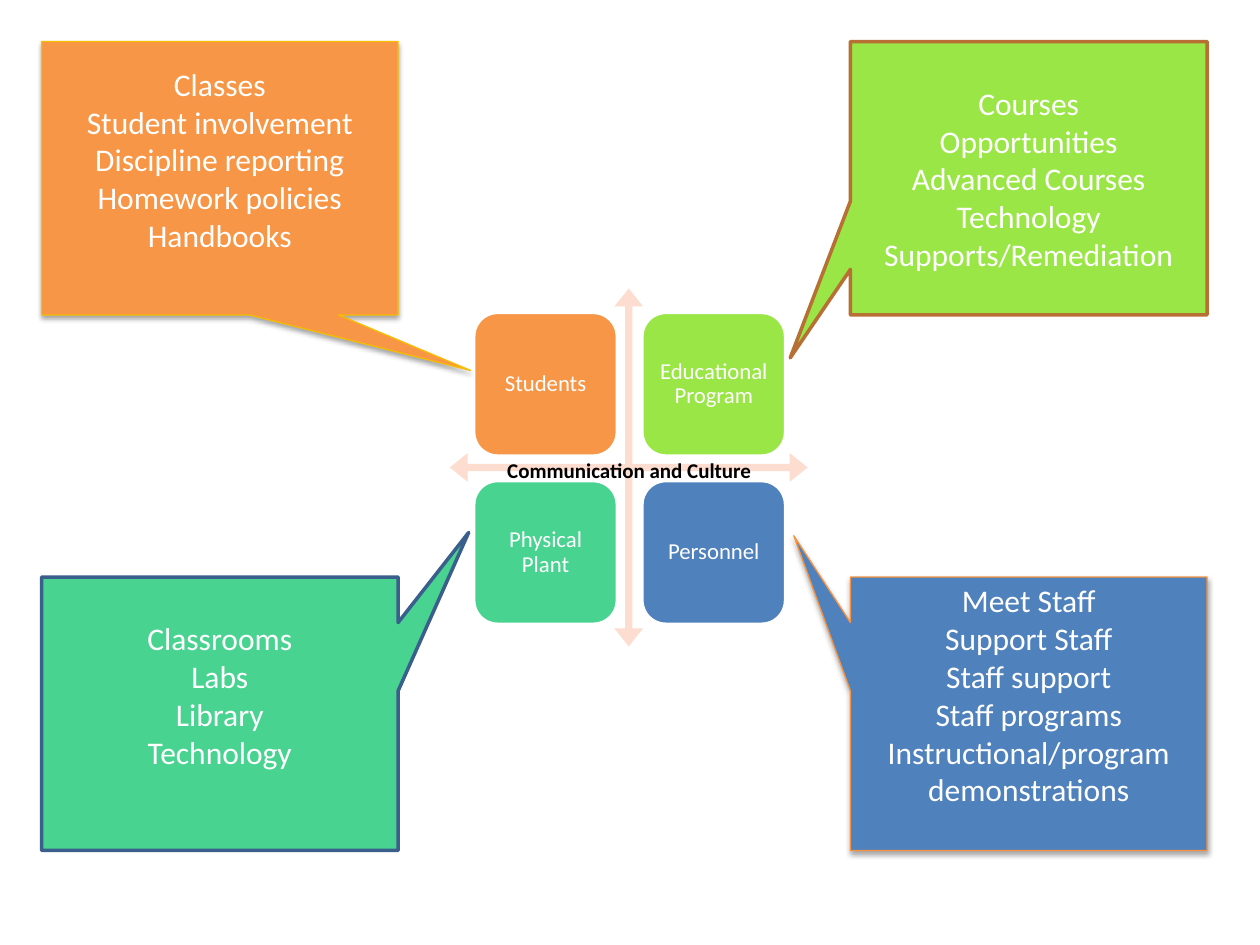
from lxml import etree
from pptx import Presentation
from pptx.dml.color import RGBColor
from pptx.enum.shapes import MSO_SHAPE as Shape
from pptx.enum.text import MSO_ANCHOR as Anchor, PP_ALIGN as Align
from pptx.oxml.ns import qn
from pptx.util import Inches, Pt

# Content: one entry per area, with column and row in the two-by-two grid
AREAS = [
    dict(name="Students", column=0, row=0, fill="F79646", line="F9BC00",
         line_width=0.75, pointer=(0.703, 0.703), shadow=True, bottom=0.35,
         topics=["Classes", "Student involvement", "Discipline reporting",
                 "Homework policies", "Handbooks"]),
    dict(name="Physical Plant", column=0, row=1, fill="49D390", line="3A5F8C",
         line_width=2, pointer=(0.698, -0.663), shadow=False, bottom=0.35,
         topics=["Classrooms", "Labs", "Library", "Technology"]),
    dict(name="Educational Program", column=1, row=0, fill="99E646", line="B76F34",
         line_width=2, pointer=(-0.669, 0.657), shadow=False, bottom=0.05,
         topics=["Courses", "Opportunities", "Advanced Courses", "Technology",
                 "Supports/Remediation"]),
    dict(name="Personnel", column=1, row=1, fill="4F81BD", line="F69240",
         line_width=0.75, pointer=(-0.659, -0.651), shadow=True, bottom=0.35,
         topics=["Meet Staff", "Support Staff", "Staff support", "Staff programs",
                 "Instructional/program demonstrations"]),
]
CENTER_LABEL = "Communication and Culture"

# Grid geometry in inches
TILE_ORIGIN, TILE_SIZE, TILE_STEP = (3.76, 2.48), 1.14, 1.335
CALLOUT_ORIGIN, CALLOUT_SIZE, CALLOUT_STEP = (0.33, 0.33), (2.83, 2.17), (6.42, 4.25)


def color(value):
    return RGBColor.from_string(value)


def add_box(slide, kind, left, top, width, height, fill, line=None, line_width=1):
    shape = slide.shapes.add_shape(
        kind, Inches(left), Inches(top), Inches(width), Inches(height))
    shape.shadow.inherit = False
    shape.fill.solid()
    shape.fill.fore_color.rgb = color(fill)
    if line:
        shape.line.color.rgb = color(line)
        shape.line.width = Pt(line_width)
    else:
        shape.line.fill.background()
    return shape


def write(shape, lines, size, text_color="FFFFFF", bold=False, spacing=None,
          insets=(0.1, 0.05, 0.1, 0.05), anchor=Anchor.MIDDLE):
    frame = shape.text_frame
    frame.word_wrap = True
    frame.vertical_anchor = anchor
    (frame.margin_left, frame.margin_top,
     frame.margin_right, frame.margin_bottom) = map(Inches, insets)
    for index, line in enumerate(lines):
        paragraph = frame.add_paragraph() if index else frame.paragraphs[0]
        paragraph.alignment = Align.CENTER
        if spacing:
            paragraph.line_spacing = spacing
        run = paragraph.add_run()
        run.text = line
        run.font.name = "Calibri"
        run.font.size = Pt(size)
        run.font.bold = bold
        run.font.color.rgb = color(text_color)


def add_shadow(shape):
    effects = shape._element.spPr.find(qn("a:effectLst"))
    shadow = etree.SubElement(
        effects, qn("a:outerShdw"), blurRad=str(Pt(3.1)), dist=str(Pt(1.8)),
        dir="5400000", rotWithShape="0")
    black = etree.SubElement(shadow, qn("a:srgbClr"), val="000000")
    etree.SubElement(black, qn("a:alpha"), val="35000")


def add_tile(slide, area):
    left = TILE_ORIGIN[0] + area["column"] * TILE_STEP
    top = TILE_ORIGIN[1] + area["row"] * TILE_STEP
    tile = add_box(slide, Shape.ROUNDED_RECTANGLE, left, top, TILE_SIZE, TILE_SIZE,
                   area["fill"], "FFFFFF", 2)
    write(tile, [area["name"]], 13, spacing=0.9, insets=(0.05,) * 4)


def add_callout(slide, area):
    left = CALLOUT_ORIGIN[0] + area["column"] * CALLOUT_STEP[0]
    top = CALLOUT_ORIGIN[1] + area["row"] * CALLOUT_STEP[1]
    callout = add_box(slide, Shape.RECTANGULAR_CALLOUT, left, top, *CALLOUT_SIZE,
                      area["fill"], area["line"], area["line_width"])
    for index, value in enumerate(area["pointer"]):
        callout.adjustments[index] = value
    if area["shadow"]:
        add_shadow(callout)
    write(callout, area["topics"], 18, insets=(0.1, 0.05, 0.1, area["bottom"]))


def main():
    presentation = Presentation()
    presentation.slide_width, presentation.slide_height = Inches(10), Inches(7.5)
    slide = presentation.slides.add_slide(presentation.slide_layouts[6])

    # Cross of arrows behind the tiles
    cross = add_box(slide, Shape.QUAD_ARROW, 3.57, 2.29, 2.84, 2.84, "FCDDCF")
    for index, value in enumerate((0.02, 0.04, 0.05)):
        cross.adjustments[index] = value

    # Central tiles and their shared label
    for area in AREAS:
        add_tile(slide, area)
    label = slide.shapes.add_textbox(Inches(2.83), Inches(3.58), Inches(4.33), Inches(0.3))
    write(label, [CENTER_LABEL], 12, "000000", bold=True, anchor=Anchor.TOP)

    # Corner callouts
    for area in AREAS:
        add_callout(slide, area)

    presentation.save("out.pptx")


if __name__ == "__main__":
    main()
